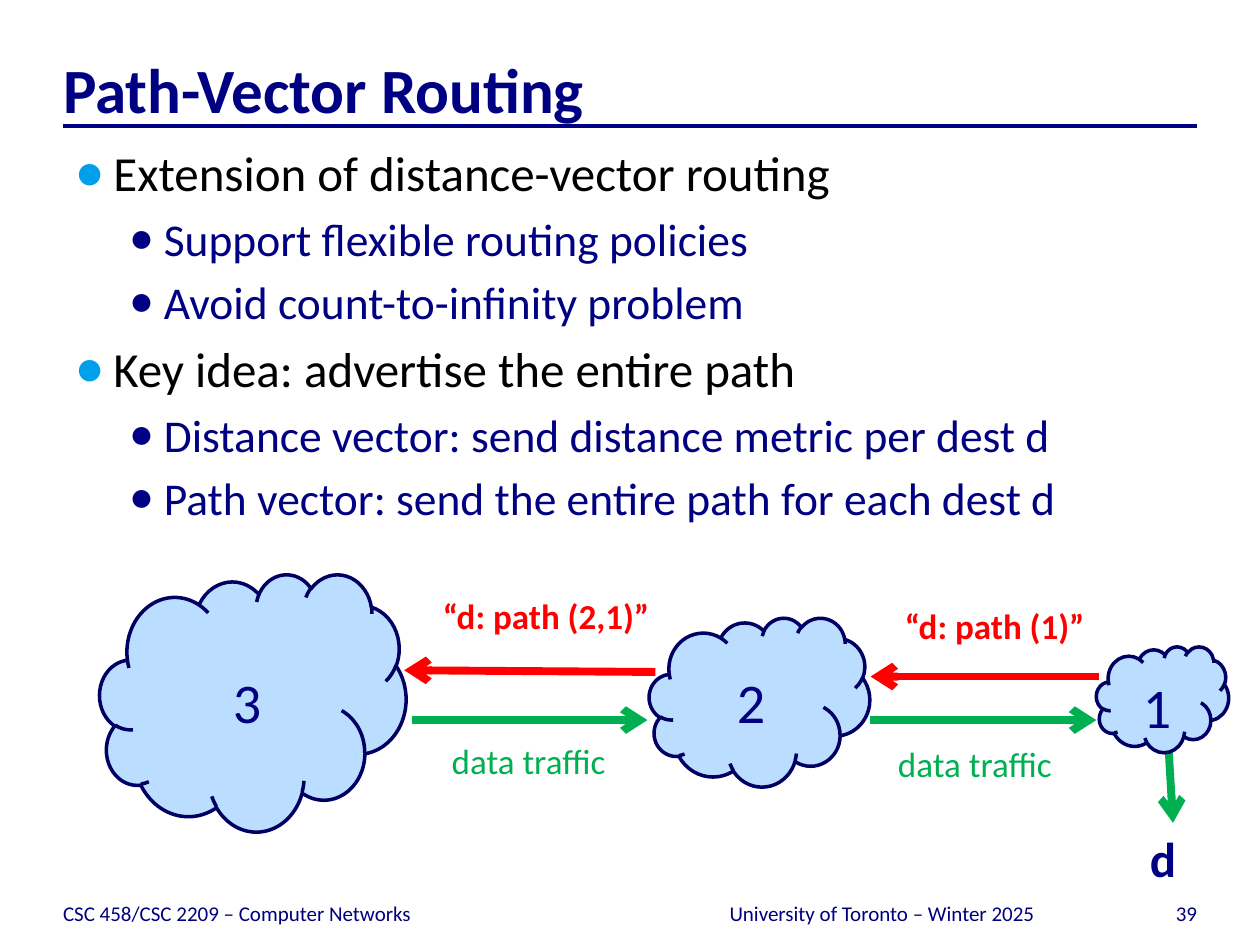
from lxml import etree
from pptx import Presentation
from pptx.dml.color import RGBColor
from pptx.enum import shapes, text
from pptx.oxml import ns
from pptx.util import Pt

FONT = "Calibri"
NAVY, FOOTER_NAVY, OUTLINE = "000082", "00007C", "000062"
BLACK, SKY, CLOUD_FILL = "000000", "009FEC", "BBDDFF"
GREEN, RED = "00B050", "FF0000"
ALIGN, ANCHOR = text.PP_ALIGN, text.MSO_ANCHOR


def color(value):
    return RGBColor.from_string(value)


def child(parent, tag, **attributes):
    return etree.SubElement(parent, ns.qn(tag), attributes)


def place(shape, left, top, width, height):
    shape.left, shape.top = Pt(left), Pt(top)
    shape.width, shape.height = Pt(width), Pt(height)


def write(para, words, size=20, ink=BLACK, bold=False, align=ALIGN.LEFT):
    para.alignment = align
    span = para.add_run()
    span.text = words
    span.font.name, span.font.size, span.font.bold = FONT, Pt(size), bold
    span.font.color.rgb = color(ink)


def set_margins(frame, top=0):
    frame.margin_left = frame.margin_right = frame.margin_bottom = 0
    frame.margin_top = Pt(top)


def add_label(page, box, words, wrap=False, **style):
    frame = page.shapes.add_textbox(*map(Pt, box)).text_frame
    frame.word_wrap = wrap
    write(frame.paragraphs[0], words, **style)
    return frame


def add_line(page, start, end, ink, width, arrow=False):
    line = page.shapes.add_connector(
        shapes.MSO_CONNECTOR.STRAIGHT, *map(Pt, (*start, *end)))
    line.line.color.rgb = color(ink)
    line.line.width = Pt(width)
    if arrow:
        child(line.line._get_or_add_ln(), "a:tailEnd", type="arrow")
    child(line._element.spPr, "a:effectLst")


def add_title(page, box, words):
    left, top, width, height = box
    title = page.shapes.title
    place(title, *box)
    frame = title.text_frame
    set_margins(frame, top=3.6)
    frame.vertical_anchor = ANCHOR.BOTTOM
    frame.auto_size = text.MSO_AUTO_SIZE.NONE
    write(frame.paragraphs[0], words, size=36, ink=NAVY, bold=True)
    add_line(page, (left, top + height), (left + width, top + height), NAVY, 2.25)


def format_bullet(para, indent, hanging, ink, percent):
    props = para._p.get_or_add_pPr()
    props.set("marL", str(Pt(indent)))
    props.set("indent", str(-Pt(hanging)))
    child(child(props, "a:spcBef"), "a:spcPct", val="20000")
    child(child(props, "a:buClr"), "a:srgbClr", val=ink)
    child(props, "a:buSzPct", val=str(percent * 1000))
    child(props, "a:buFont", typeface=FONT)
    child(props, "a:buChar", char="●")


def add_bullets(page, box, items):
    body = page.placeholders[1]
    place(body, *box)
    frame = body.text_frame
    frame.auto_size = text.MSO_AUTO_SIZE.NONE
    for index, (level, words) in enumerate(items):
        para = frame.add_paragraph() if index else frame.paragraphs[0]
        para.level = level
        if level:
            write(para, words, size=26, ink=NAVY)
            format_bullet(para, 50.4, 19.4, NAVY, 85)
        else:
            write(para, words, size=28)
            format_bullet(para, 21.6, 21.6, SKY, 95)


def add_cloud(page, box):
    cloud = page.shapes.add_shape(shapes.MSO_SHAPE.CLOUD, *map(Pt, box))
    cloud.shadow.inherit = False
    cloud.fill.solid()
    cloud.fill.fore_color.rgb = color(CLOUD_FILL)
    cloud.line.color.rgb = color(OUTLINE)
    cloud.line.width = Pt(2)


def add_topology(page, left, top):
    def at(x, y, *size):
        return (left + x, top + y, *size)

    add_line(page, at(610.4, 93.2), at(613.3, 142.2), GREEN, 4.5, arrow=True)

    clouds = [
        ("3", (0, 0, 175, 147), (69, 50)),
        ("2", (314, 25, 126, 96.5), (357, 50)),
        ("1", (569.5, 41.5, 75.6, 60.5), (589, 53)),
    ]
    for number, outline, corner in clouds:
        add_cloud(page, at(*outline))
        add_label(page, at(*corner, 32.4, 46), number, size=32, ink=NAVY)

    arrows = [
        ((178.4, 83.5), (313, 83.5), GREEN),
        ((440, 83.5), (569.5, 83.5), GREEN),
        ((317.5, 56), (174, 55), RED),
        ((571, 58.6), (440.5, 58.6), RED),
    ]
    for start, end, ink in arrows:
        add_line(page, at(*start), at(*end), ink, 4.5, arrow=True)

    captions = [
        ("“d: path (2,1)”", (189, 8, 143, 32), RED),
        ("“d: path (1)”", (453, 14, 127, 32), RED),
        ("data traffic", (194, 91, 106, 32), GREEN),
        ("data traffic", (449, 93, 106, 32), GREEN),
    ]
    for words, box, ink in captions:
        add_label(page, at(*box), words, ink=ink, bold=ink == RED)
    add_label(page, at(593, 142, 30, 41), "d", size=28, ink=NAVY, bold=True)


def add_footer(page, left, top, height):
    parts = [
        (0, 348, "CSC 458/CSC 2209 – Computer Networks", ALIGN.LEFT),
        (354, 228, "University of Toronto – Winter 2025", ALIGN.CENTER),
        (588, 60, "39", ALIGN.RIGHT),
    ]
    for offset, width, words, align in parts:
        frame = add_label(page, (left + offset, top, width, height), words,
                          wrap=True, size=12, ink=FOOTER_NAVY, align=align)
        set_margins(frame)
        frame.vertical_anchor = ANCHOR.BOTTOM


def main():
    deck = Presentation()
    deck.slide_width, deck.slide_height = Pt(720), Pt(540)
    page = deck.slides.add_slide(deck.slide_layouts[1])
    page.background.fill.solid()
    page.background.fill.fore_color.rgb = color("FFFFFF")
    add_title(page, (36, 24, 648, 48), "Path-Vector Routing")
    add_bullets(page, (36, 78, 648, 420), [
        (0, "Extension of distance-vector routing"),
        (1, "Support flexible routing policies"),
        (1, "Avoid count-to-infinity problem"),
        (0, "Key idea: advertise the entire path"),
        (1, "Distance vector: send distance metric per dest d"),
        (1, "Path vector: send the entire path for each dest d"),
    ])
    add_topology(page, 57, 328)
    add_footer(page, 36, 500.4, 28.8)
    deck.save("out.pptx")


if __name__ == "__main__":
    main()
